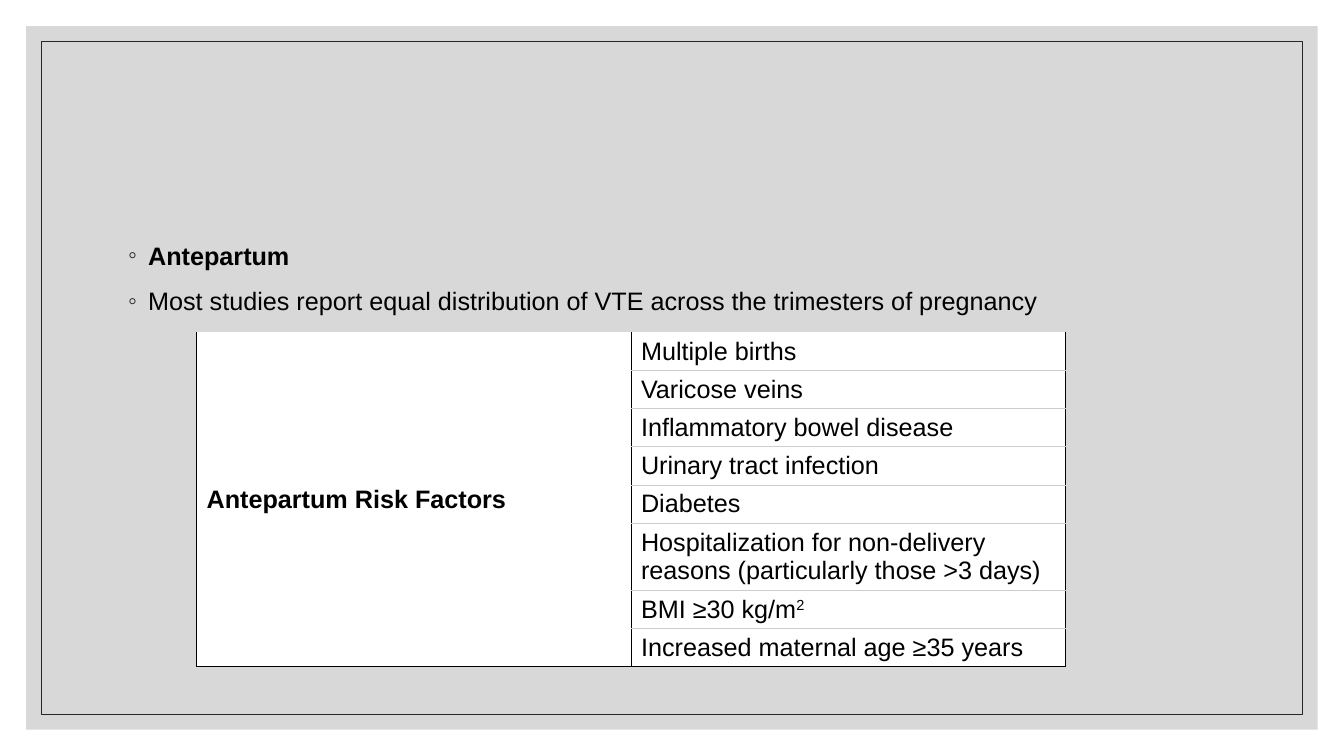
from lxml import etree
from pptx import Presentation
from pptx.dml.color import RGBColor
from pptx.enum.shapes import MSO_SHAPE
from pptx.enum.text import MSO_ANCHOR, MSO_AUTO_SIZE
from pptx.oxml.ns import qn
from pptx.util import Pt

RECTANGLE = MSO_SHAPE.RECTANGLE
TOP, MIDDLE = MSO_ANCHOR.TOP, MSO_ANCHOR.MIDDLE
NO_FIT = MSO_AUTO_SIZE.NONE

PAGE_WIDTH, PAGE_HEIGHT = 960, 540
PANEL_MARGIN, FRAME_MARGIN = 18.72, 29.5
BODY_BOX = (84.24, 165.6, 792, 303.12)
TABLE_LEFT, TABLE_TOP, COLUMN_WIDTH = 140.4, 237.3, 310.32
LINE_HEIGHT, CELL_PADDING = 20.7, 3.3

BULLETS = [
    ("Antepartum", True),
    ("Most studies report equal distribution of VTE across the trimesters of pregnancy", False),
]
TABLE_HEADING = "Antepartum Risk Factors"
RISK_FACTORS = [
    ("Multiple births", "", 1),
    ("Varicose veins", "", 1),
    ("Inflammatory bowel disease", "", 1),
    ("Urinary tract infection", "", 1),
    ("Diabetes", "", 1),
    ("Hospitalization for non-delivery reasons (particularly those >3 days)", "", 2),
    ("BMI ≥30 kg/m", "2", 1),
    ("Increased maternal age ≥35 years", "", 1),
]
BLACK, WHITE, GRAY, DARK, RULE = "000000", "FFFFFF", "BFBFBF", "262626", "CCCCCC"


def color(value):
    return RGBColor.from_string(value)


def style_runs(para, bold):
    for span in para.runs:
        span.font.name = "Arial"
        span.font.size = Pt(18)
        span.font.bold = bold
        span.font.color.rgb = color(BLACK)


def add_frame(page, margin):
    frame = page.shapes.add_shape(
        RECTANGLE, Pt(margin), Pt(margin),
        Pt(PAGE_WIDTH - 2 * margin), Pt(PAGE_HEIGHT - 2 * margin))
    frame.shadow.inherit = False
    return frame


def add_bullet(para):
    properties = para._p.get_or_add_pPr()
    properties.set("marL", str(Pt(14.4)))
    properties.set("indent", str(Pt(-14.4)))
    bullet_color = etree.SubElement(properties, qn("a:buClr"))
    etree.SubElement(bullet_color, qn("a:srgbClr"), val=DARK)
    etree.SubElement(properties, qn("a:buFont"), typeface="Arial")
    etree.SubElement(properties, qn("a:buChar"), char="◦")
    para.line_spacing = 1.1
    para.space_before = Pt(9)


def format_cell(cell, top, bottom):
    cell.fill.solid()
    cell.fill.fore_color.rgb = color(WHITE)
    cell.vertical_anchor = MIDDLE
    cell.margin_top = cell.margin_bottom = Pt(CELL_PADDING)
    properties = cell._tc.get_or_add_tcPr()
    sides = [("lnL", BLACK), ("lnR", BLACK), ("lnT", top), ("lnB", bottom)]
    for position, (side, value) in enumerate(sides):
        border = etree.Element(qn("a:" + side), w=str(Pt(0.75)))
        if value:
            fill = etree.SubElement(border, qn("a:solidFill"))
            etree.SubElement(fill, qn("a:srgbClr"), val=value)
        else:
            etree.SubElement(border, qn("a:noFill"))
        properties.insert(position, border)


def add_body(page):
    title = page.shapes.title
    title._element.getparent().remove(title._element)
    body = page.placeholders[1]
    body.left, body.top, body.width, body.height = map(Pt, BODY_BOX)
    page.shapes._spTree.append(body._element)
    frame = body.text_frame
    frame.text = "\n".join(text for text, bold in BULLETS)
    frame.auto_size = NO_FIT
    frame.vertical_anchor = TOP
    for para, (text, bold) in zip(frame.paragraphs, BULLETS):
        add_bullet(para)
        style_runs(para, bold)


def add_risk_table(page):
    heights = [lines * LINE_HEIGHT + 2 * CELL_PADDING for text, power, lines in RISK_FACTORS]
    count = len(RISK_FACTORS)
    table = page.shapes.add_table(
        count, 2, Pt(TABLE_LEFT), Pt(TABLE_TOP),
        Pt(2 * COLUMN_WIDTH), Pt(sum(heights))).table
    table.first_row = table.horz_banding = False
    for index, (text, power, lines) in enumerate(RISK_FACTORS):
        table.rows[index].height = Pt(heights[index])
        last = index == count - 1
        format_cell(table.cell(index, 0), None, BLACK if last else None)
        cell = table.cell(index, 1)
        format_cell(cell, RULE if index else None, BLACK if last else RULE)
        cell.text_frame.text = text
        para = cell.text_frame.paragraphs[0]
        if power:
            exponent = para.add_run()
            exponent.text = power
            exponent._r.get_or_add_rPr().set("baseline", "30000")
        style_runs(para, False)
    heading = table.cell(0, 0)
    heading.merge(table.cell(count - 1, 0))
    format_bottom = heading._tc.tcPr.find(qn("a:lnB"))
    format_bottom.remove(format_bottom[0])
    fill = etree.SubElement(format_bottom, qn("a:solidFill"))
    etree.SubElement(fill, qn("a:srgbClr"), val=BLACK)
    heading.text_frame.text = TABLE_HEADING
    style_runs(heading.text_frame.paragraphs[0], True)


def main():
    deck = Presentation()
    deck.slide_width, deck.slide_height = Pt(PAGE_WIDTH), Pt(PAGE_HEIGHT)
    page = deck.slides.add_slide(deck.slide_layouts[1])

    panel = add_frame(page, PANEL_MARGIN)
    panel.fill.solid()
    panel.fill.fore_color.rgb = color(GRAY)
    panel.line.fill.background()
    shade = panel._element.spPr.find(qn("a:solidFill"))[0]
    etree.SubElement(shade, qn("a:alpha"), val="60000")

    outline = add_frame(page, FRAME_MARGIN)
    outline.fill.background()
    outline.line.color.rgb = color(DARK)
    outline.line.width = Pt(0.5)

    add_body(page)
    add_risk_table(page)
    deck.save("out.pptx")


if __name__ == "__main__":
    main()
